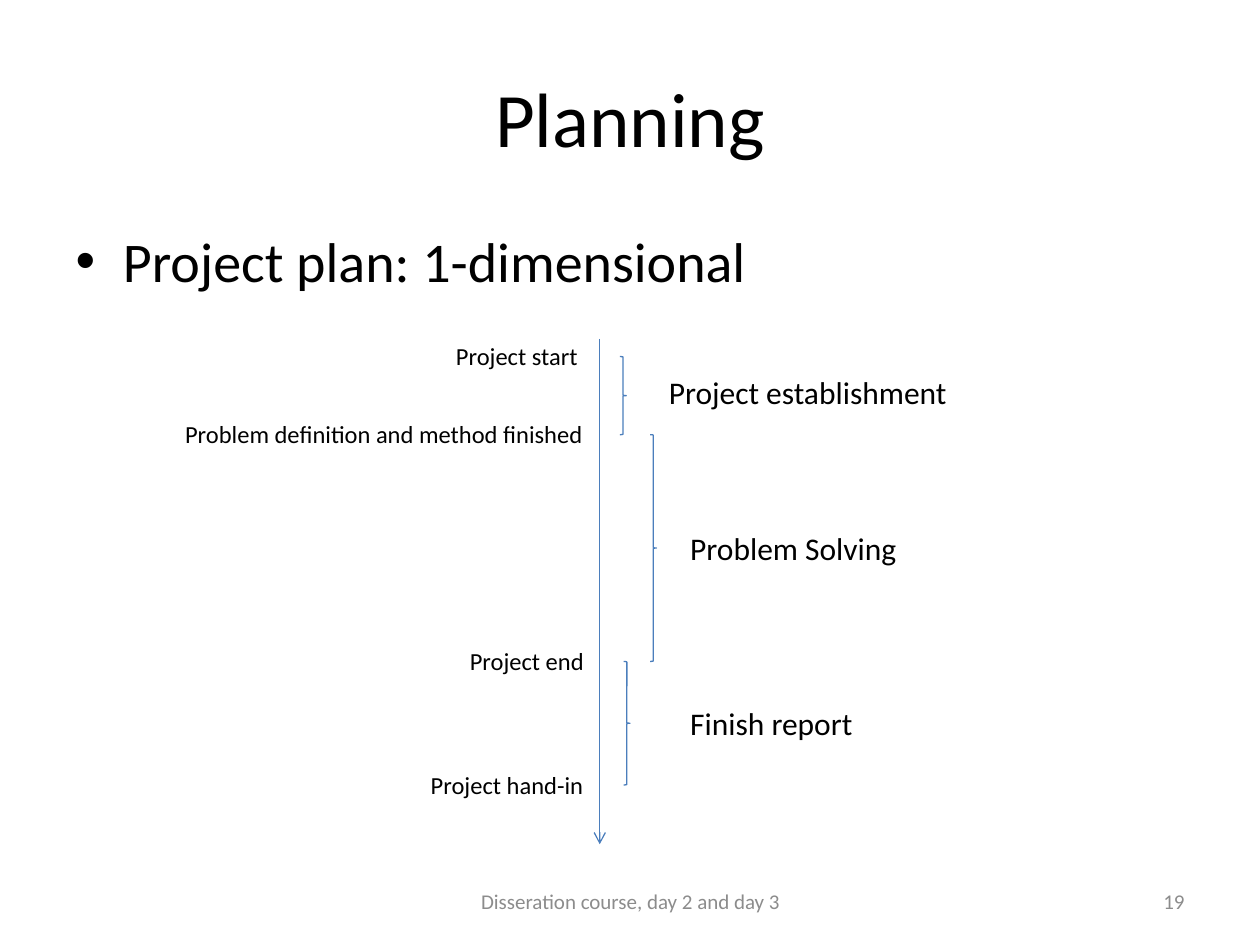
"""Build the one-dimensional project plan slide."""
import dataclasses

import pptx
import pptx.dml.color
import pptx.enum.shapes
import pptx.enum.text
import pptx.oxml
import pptx.oxml.ns
import pptx.util

Inches = pptx.util.Inches
Align = pptx.enum.text.PP_ALIGN
Anchor = pptx.enum.text.MSO_ANCHOR
Shape = pptx.enum.shapes.MSO_SHAPE


@dataclasses.dataclass(frozen=True)
class Theme:
    """Hold the colours, font and type sizes of the slide."""
    font: str = "Calibri"
    ink: str = "000000"
    muted: str = "8C8C8C"
    accent: str = "4B7EBC"
    title: int = 44
    body: int = 32
    phase: int = 18
    milestone: int = 14
    footer: int = 12
    line: float = 0.75


THEME = Theme()
AXIS_X = 4.76
MILESTONES = [
    ("Project start", 2.83, 3.52, 1.18),
    ("Problem definition and method finished", 3.45, 1.37, 3.39),
    ("Project end", 5.25, 3.63, 1.12),
    ("Project hand-in", 6.23, 3.32, 1.42),
]
PHASES = [
    ("Project establishment", 4.92, 5.21, 2.91, 2.43),
    ("Problem Solving", 5.16, 5.38, 4.15, 1.86),
    ("Finish report", 4.95, 5.38, 5.54, 1.5),
]


def rgb(value):
    """Return a colour object for a hexadecimal string."""
    return pptx.dml.color.RGBColor.from_string(value)


def write_text(box, text, *, size, color=THEME.ink, align=None, anchor=None):
    """Write one formatted paragraph into a shape."""
    frame = box.text_frame
    if anchor is not None:
        frame.vertical_anchor = anchor
    para = frame.paragraphs[0]
    if align is not None:
        para.alignment = align
    span = para.add_run()
    span.text = text
    span.font.name = THEME.font
    span.font.size = pptx.util.Pt(size)
    span.font.color.rgb = rgb(color)


def fill_placeholder(box, text, left, top, width, height, **style):
    """Move a placeholder and write its text."""
    box.left, box.top = Inches(left), Inches(top)
    box.width, box.height = Inches(width), Inches(height)
    write_text(box, text, **style)


def add_label(page, text, left, top, width, height, *, wrap=False, **style):
    """Add a text box that holds one line."""
    box = page.shapes.add_textbox(
        Inches(left), Inches(top), Inches(width), Inches(height))
    box.text_frame.word_wrap = wrap
    if not wrap:
        box.text_frame.auto_size = pptx.enum.text.MSO_AUTO_SIZE.SHAPE_TO_FIT_TEXT
    write_text(box, text, **style)


def style_line(shape):
    """Give a shape the accent outline."""
    shape.line.color.rgb = rgb(THEME.accent)
    shape.line.width = pptx.util.Pt(THEME.line)


def add_time_axis(page, top, bottom):
    """Add the downward time arrow."""
    axis = page.shapes.add_connector(
        pptx.enum.shapes.MSO_CONNECTOR.STRAIGHT,
        Inches(AXIS_X), Inches(top), Inches(AXIS_X), Inches(bottom))
    style_line(axis)
    head = pptx.oxml.parse_xml(
        f'<a:tailEnd {pptx.oxml.ns.nsdecls("a")} type="arrow"/>')
    axis.line._get_or_add_ln().append(head)
    effects = pptx.oxml.parse_xml(
        f'<a:effectLst {pptx.oxml.ns.nsdecls("a")}/>')
    axis._element.spPr.append(effects)


def add_brace(page, left, top, bottom):
    """Add a right brace that spans one phase."""
    brace = page.shapes.add_shape(
        Shape.RIGHT_BRACE, Inches(left), Inches(top),
        Inches(0.05), Inches(bottom - top))
    brace.shadow.inherit = False
    brace.fill.background()
    style_line(brace)


def main():
    """Build and save the deck."""
    deck = pptx.Presentation()
    deck.slide_width, deck.slide_height = Inches(10), Inches(7.5)
    page = deck.slides.add_slide(deck.slide_layouts[1])

    fill_placeholder(page.shapes.title, "Planning", 0.5, 0.3, 9, 1.25,
                     size=THEME.title, align=Align.CENTER, anchor=Anchor.MIDDLE)
    fill_placeholder(page.placeholders[1], "Project plan: 1-dimensional",
                     0.5, 1.75, 9, 5.54, size=THEME.body)

    add_time_axis(page, 2.69, 6.7)
    for text, moment, left, width in MILESTONES:
        add_label(page, text, left, moment - 0.17, width, 0.34,
                  size=THEME.milestone)

    moments = [milestone[1] for milestone in MILESTONES]
    for phase, start, end in zip(PHASES, moments, moments[1:]):
        text, brace_left, left, top, width = phase
        add_brace(page, brace_left, start, end)
        add_label(page, text, left, top, width, 0.4, size=THEME.phase)

    footer = {"size": THEME.footer, "color": THEME.muted,
              "anchor": Anchor.MIDDLE, "wrap": True}
    add_label(page, "19", 7.17, 6.95, 2.33, 0.4, align=Align.RIGHT, **footer)
    add_label(page, "Disseration course, day 2 and day 3",
              3.42, 6.95, 3.17, 0.4, align=Align.CENTER, **footer)
    deck.save("out.pptx")


if __name__ == "__main__":
    main()
